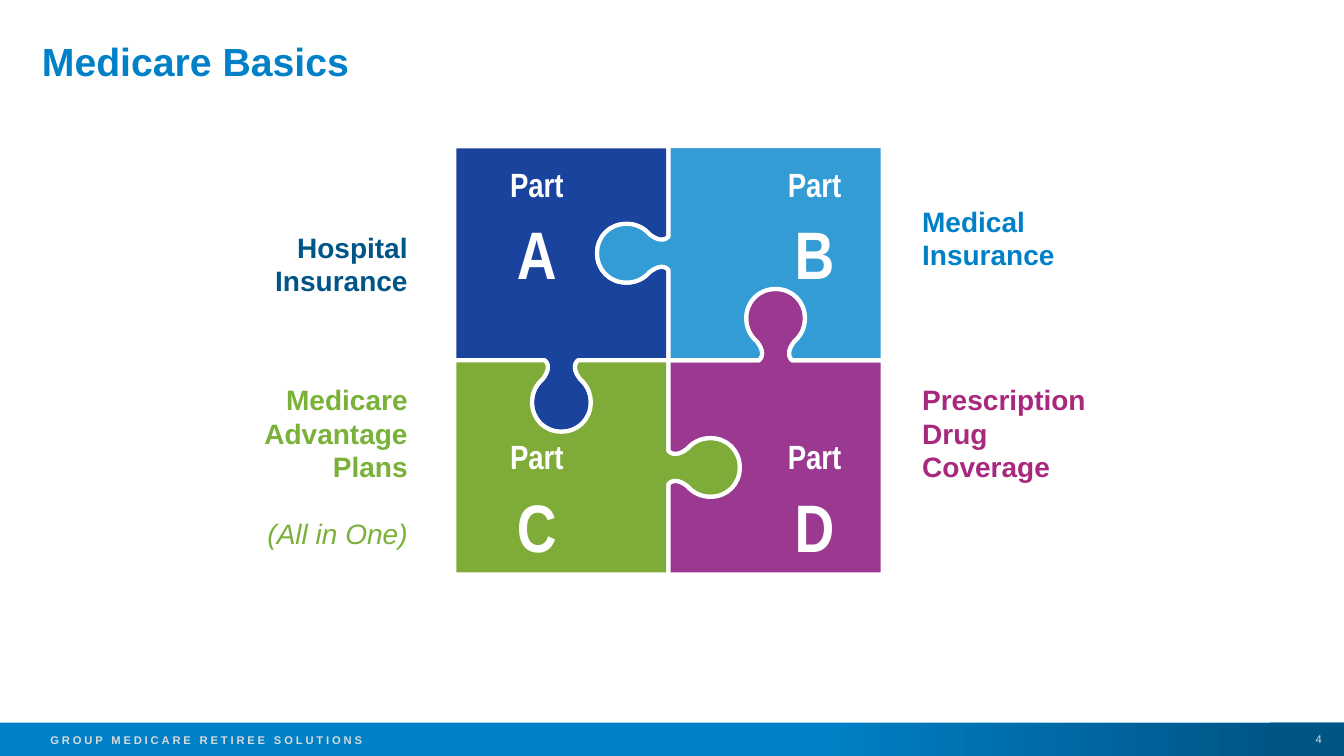
from pptx import Presentation
from pptx import util as u
from pptx.dml.color import RGBColor
from pptx.enum import shapes, text
from pptx.oxml import ns, xmlchemy

WIDE, HIGH = 960, 540
BLUE, NAVY, GREY, WHITE = "0080C7", "005587", "D9D9D9", "FFFFFF"
LEFT, MID, RIGHT = text.PP_ALIGN.LEFT, text.PP_ALIGN.CENTER, text.PP_ALIGN.RIGHT

# Bezier points of half a puzzle tab: (along the edge, away from the edge)
HALF_TAB = [
    (-11.8, 0),
    (-7, 4.5), (-11.5, 11), (-13.5, 13.5),
    (-18, 17.5), (-21, 23), (-21, 30),
    (-21, 42), (-12, 51), (0, 51),
]


def color(code):
    return RGBColor.from_string(code)


def box(pts):
    return [u.Pt(n) for n in pts]


def style(par, size, code, bold=False, italic=False, face="Arial", align=LEFT):
    par.alignment = align
    for run in par.runs:
        font = run.font
        font.name, font.size = face, u.Pt(size)
        font.bold, font.italic = bold, italic
        font.color.rgb = color(code)


def frame(shape, words, inset=True, wrap=True, anchor=text.MSO_ANCHOR.TOP):
    tf = shape.text_frame
    tf.text = words
    tf.word_wrap, tf.vertical_anchor = wrap, anchor
    if not inset:
        tf.margin_left = tf.margin_right = tf.margin_top = tf.margin_bottom = 0
    return tf


def centred(slide, area, words):
    """Add a text box without insets or wrapping, anchored in the middle."""
    shape = slide.shapes.add_textbox(*box(area))
    return frame(shape, words, False, False, text.MSO_ANCHOR.MIDDLE)


def title(slide, area, words):
    shape = slide.shapes.title
    shape.left, shape.top, shape.width, shape.height = box(area)
    tf = frame(shape, words, inset=False)
    tf.auto_size = text.MSO_AUTO_SIZE.NONE
    style(tf.paragraphs[0], 28, BLUE, bold=True)


def footer(slide, area, words, number):
    x, y, w, h = area
    bars = [(0, w, BLUE, BLUE), (587, 324, BLUE, NAVY), (907, w - 907, NAVY, NAVY)]
    for left, wide, first, last in bars:
        bar = slide.shapes.add_shape(
            shapes.MSO_SHAPE.RECTANGLE, *box((x + left, y, wide, h)))
        bar.shadow.inherit = False
        bar.line.fill.background()
        if first == last:
            bar.fill.solid()
            bar.fill.fore_color.rgb = color(first)
        else:
            bar.fill.gradient()
            bar.fill.gradient_angle = 0
            for stop, code in zip(bar.fill.gradient_stops, (first, last)):
                stop.color.rgb = color(code)
    par = centred(slide, (x + 36, y + 0.6, 230, h), words).paragraphs[0]
    par.space_after = u.Pt(6)
    style(par, 8, GREY, bold=True)
    par.runs[0].font._element.set("spc", "200")
    par = centred(slide, (x + w - 36, y, 36, h), number).paragraphs[0]
    style(par, 8, GREY, align=MID)


def line(start, end):
    """Return the Bezier points of a straight edge, without its start."""
    return [start, end, end]


def seam(half):
    """Return the edge from the left side to the centre, its tab pointing down."""
    tab = HALF_TAB + [(-x, y) for x, y in HALF_TAB[-2::-1]]
    tab = [(x - half / 2, y) for x, y in tab]
    side, core = (-half, 0), (0, 0)
    return [side] + line(side, tab[0]) + tab[1:] + line(tab[-1], core)


def turn(pts, times):
    """Rotate points by quarter turns, anticlockwise."""
    for _ in range(times):
        pts = [(y, -x) for x, y in pts]
    return pts


def bend(shape):
    """Join every three straight segments of a freeform into one Bezier curve."""
    segs = list(shape._element.iter(ns.qn("a:lnTo")))
    for k in range(0, len(segs), 3):
        cubic = xmlchemy.OxmlElement("a:cubicBezTo")
        segs[k].addprevious(cubic)
        for seg in segs[k:k + 3]:
            cubic.append(seg[0])
            seg.getparent().remove(seg)


def puzzle(slide, area, parts):
    x, y, size = area
    half = size / 2
    edge, corner = seam(half), (-half, -half)
    piece = [corner] + line(corner, edge[0]) + edge[1:] + turn(edge, 3)[-2::-1]
    for k, (_, code) in enumerate(parts):
        pts = [(u.Pt(x + half + a), u.Pt(y + half + b)) for a, b in turn(piece, k)]
        form = slide.shapes.build_freeform(*pts[0])
        form.add_line_segments(pts[1:], close=True)
        shape = form.convert_to_shape()
        bend(shape)
        shape.shadow.inherit = False
        shape.fill.solid()
        shape.fill.fore_color.rgb = color(code)
        shape.line.color.rgb = color(WHITE)
        shape.line.width = u.Pt(3)
    spots = [(23, 22.8), (23, 217.4), (221.4, 217.4), (221.4, 22.8)]
    for (name, _), (dx, dy) in zip(parts, spots):
        tf = centred(slide, (x + dx, y + dy, 72, 72), "Part\n" + name)
        for par, pt in zip(tf.paragraphs, (24, 48)):
            par.space_after = u.Pt(6)
            style(par, pt, WHITE, bold=True, face="Arial Narrow", align=MID)


def caption(slide, area, words, code, align, note=None):
    tf = frame(slide.shapes.add_textbox(*box(area)), words)
    tf.auto_size = text.MSO_AUTO_SIZE.SHAPE_TO_FIT_TEXT
    style(tf.paragraphs[0], 20, code, bold=True, align=align)
    if note:
        par = tf.add_paragraph()
        par.text = note
        par.space_before = u.Pt(24)
        style(par, 20, code, italic=True, align=align)


def main():
    deck = Presentation()
    deck.slide_width, deck.slide_height = u.Pt(WIDE), u.Pt(HIGH)
    slide = deck.slides.add_slide(deck.slide_layouts[5])
    footer(slide, (0, 516.2, WIDE, 23.8), "GROUP MEDICARE RETIREE SOLUTIONS", "4")
    title(slide, (30, 26.6, 864, 46.8), "Medicare Basics")
    caption(slide, (141.3, 161, 157, 55.4), "Hospital\vInsurance", NAVY, RIGHT)
    caption(slide, (651.6, 142.3, 157, 55.4), "Medical Insurance", BLUE, LEFT)
    caption(slide, (141.3, 269.7, 157, 128), "Medicare Advantage Plans", "7AB138",
            RIGHT, "(All in One)")
    caption(slide, (651.6, 269.7, 192, 80), "Prescription\vDrug\vCoverage",
            "A8287D", LEFT)
    puzzle(slide, (324.5, 104.4, 306),
           [("A", "1A439D"), ("C", "7FAB39"), ("D", "9B3991"), ("B", "339CD5")])
    deck.save("out.pptx")


if __name__ == "__main__":
    main()
